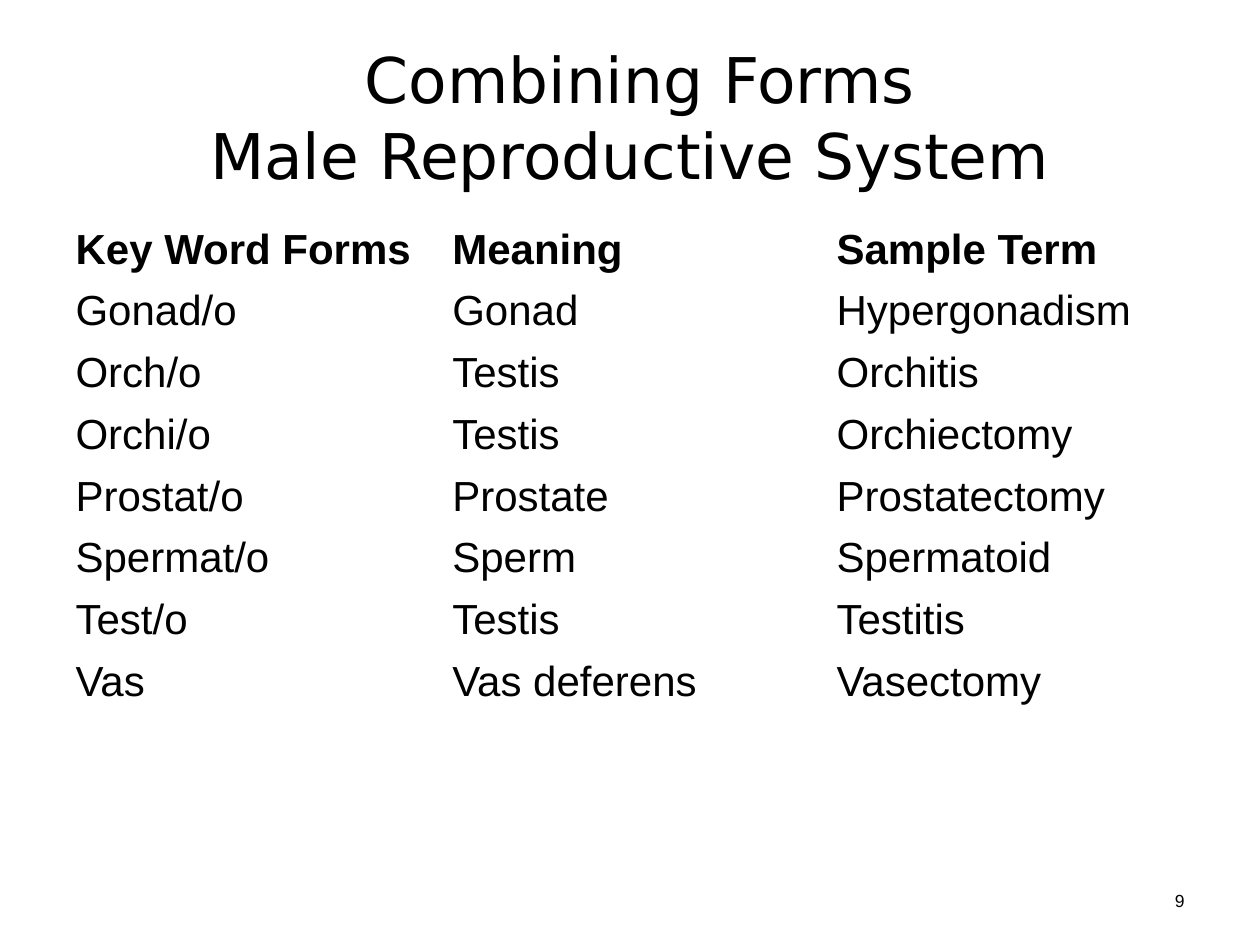
from pptx import Presentation, util as u
from pptx.dml.color import RGBColor
from pptx.enum import text

W, H = 10, 7.5
MARGIN = 0.05 * W
COLORS = {"text": "000000"}
COLUMNS = [2.99, 3.05, 2.96]
ROW_HEIGHT = 0.41
TERMS = [
    ("Key Word Forms", "Meaning", "Sample Term"),
    ("Gonad/o", "Gonad", "Hypergonadism"),
    ("Orch/o", "Testis", "Orchitis"),
    ("Orchi/o", "Testis", "Orchiectomy"),
    ("Prostat/o", "Prostate", "Prostatectomy"),
    ("Spermat/o", "Sperm", "Spermatoid"),
    ("Test/o", "Testis", "Testitis"),
    ("Vas", "Vas deferens", "Vasectomy"),
]


def write(tf, content, size, font="Arial", bold=False, align=text.PP_ALIGN.LEFT):
    p = tf.paragraphs[0]
    p.text = content
    p.alignment = align
    for r in p.runs:
        r.font.name = font
        r.font.size = u.Pt(size)
        r.font.bold = bold
        r.font.color.rgb = RGBColor.from_string(COLORS["text"])


def add_text(s, content, left, top, width, height, **fmt):
    sp = s.shapes.add_textbox(*map(u.Inches, (left, top, width, height)))
    tf = sp.text_frame
    tf.word_wrap = True
    tf.vertical_anchor = text.MSO_ANCHOR.MIDDLE
    write(tf, content, **fmt)


def add_terms(s, left, top):
    frame = s.shapes.add_table(
        len(TERMS), len(COLUMNS), u.Inches(left), u.Inches(top),
        u.Inches(sum(COLUMNS)), u.Inches(ROW_HEIGHT * len(TERMS)))
    table = frame.table
    table.first_row = table.horz_banding = False
    for column, width in zip(table.columns, COLUMNS):
        column.width = u.Inches(width)
    for i, terms in enumerate(TERMS):
        table.rows[i].height = u.Inches(ROW_HEIGHT)
        for j, term in enumerate(terms):
            cell = table.cell(i, j)
            cell.fill.background()
            cell.margin_top = cell.margin_bottom = u.Pt(3.25)
            write(cell.text_frame, term, size=24, bold=i == 0)
    # The plain style without grid lines
    style = frame._element.xpath(".//a:tableStyleId")[0]
    style.text = "{2D5ABB26-0587-4C30-8999-92F81FD0307C}"


def main():
    prs = Presentation()
    prs.slide_width, prs.slide_height = u.Inches(W), u.Inches(H)
    s = prs.slides.add_slide(prs.slide_layouts[6])
    add_text(s, " Combining Forms\vMale Reproductive System",
             MARGIN, 0.04 * H, W - 2 * MARGIN, H / 6,
             size=36, font="DejaVu Sans", align=text.PP_ALIGN.CENTER)
    add_terms(s, MARGIN, 1.75)
    add_text(s, "9", W - MARGIN - 0.56, 6.85, 0.56, 0.08 * H,
             size=10, align=text.PP_ALIGN.RIGHT)
    prs.save("out.pptx")


if __name__ == "__main__":
    main()
